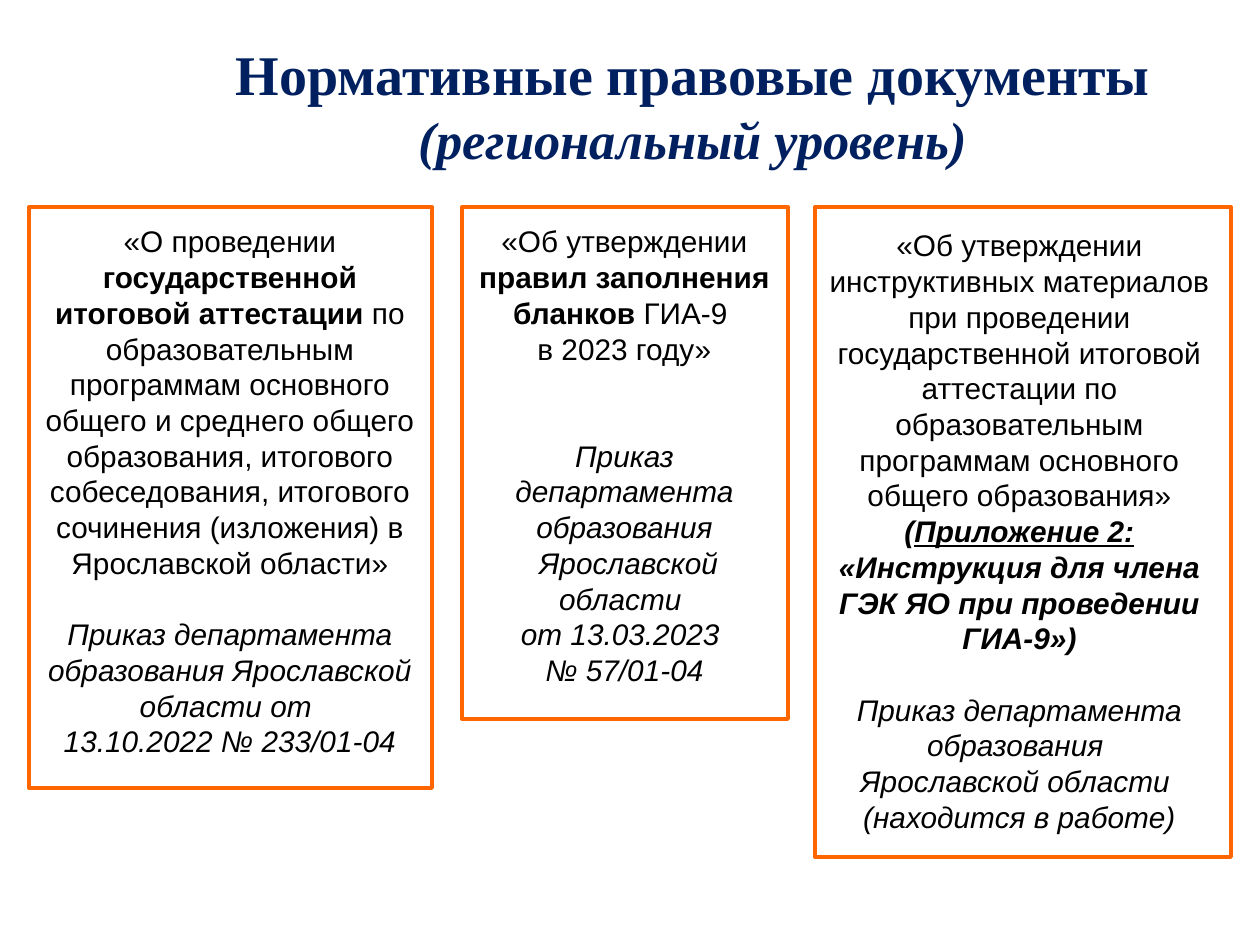
from pptx import Presentation
from pptx.dml.color import RGBColor
from pptx.enum.shapes import MSO_SHAPE
from pptx.enum.text import MSO_ANCHOR, PP_ALIGN
from pptx.util import Pt

PX = 914400 // 126
RECT = MSO_SHAPE.RECTANGLE
CENTER = PP_ALIGN.CENTER
MIDDLE = MSO_ANCHOR.MIDDLE

NAVY = RGBColor(0x00, 0x20, 0x60)
ORANGE = RGBColor(0xFF, 0x66, 0x00)
BLACK = RGBColor(0x00, 0x00, 0x00)

LINE_GAP = 20.4  # height of one text line, pt

# Frame box, text box offset and size inside it, then paragraphs:
# (lines of space before, [(text, styles)]); styles: b bold, i italic, u underline
DOCUMENTS = [
    ((29, 207, 403, 581), (-1, 10, 404, 553), [
        (0, [("«О проведении ", ""),
             ("государственной итоговой аттестации ", "b"),
             ("по образовательным программам основного общего и среднего "
              "общего образования, итогового собеседования, итогового "
              "сочинения (изложения) в Ярославской области»", "")]),
        (1, [("Приказ департамента образования Ярославской области от ", "i")]),
        (0, [("13.10.2022 № 233/01-04", "i")]),
    ]),
    ((462, 207, 326, 512), (0, 10, 325, 481), [
        (0, [("«Об утверждении ", ""),
             ("правил заполнения бланков", "b"),
             (" ГИА-9 ", "")]),
        (0, [("в 2023 году»", "")]),
        (2, [("Приказ департамента образования", "i")]),
        (0, [(" Ярославской области ", "i")]),
        (0, [("от 13.03.2023 ", "i")]),
        (0, [("№ 57/01-04", "i")]),
    ]),
    ((815, 207, 416, 650), (1, 14, 407, 625), [
        (0, [("«Об утверждении инструктивных материалов при проведении "
              "государственной итоговой аттестации по образовательным "
              "программам основного общего образования» ", ""),
             ("(", "bi"),
             ("Приложение 2: ", "biu"),
             ("«Инструкция для члена ГЭК ЯО при проведении ГИА-9»)", "bi")]),
        (1, [("Приказ департамента образования ", "i")]),
        (0, [("Ярославской области ", "i")]),
        (0, [("(находится в работе)", "i")]),
    ]),
]


def add_text_box(slide, box):
    tf = slide.shapes.add_textbox(*(v * PX for v in box)).text_frame
    tf.word_wrap = True
    return tf


def add_run(p, text, size, name, color, styles):
    r = p.add_run()
    r.text = text
    font = r.font
    font.size, font.name, font.color.rgb = Pt(size), name, color
    font.bold, font.italic = "b" in styles, "i" in styles
    if "u" in styles:
        font.underline = True


def add_title(slide, box):
    tf = add_text_box(slide, box)
    tf.vertical_anchor = MIDDLE
    p = tf.paragraphs[0]
    p.alignment = CENTER
    add_run(p, "Нормативные правовые документы ", 32, "Times New Roman", NAVY, "b")
    add_run(p, "(региональный уровень)", 30, "Times New Roman", NAVY, "bi")


def add_document(slide, box, inner, paragraphs):
    """Draw an orange frame with the document's name and order inside."""
    frame = slide.shapes.add_shape(RECT, *(v * PX for v in box))
    frame.shadow.inherit = False
    frame.fill.background()
    frame.line.color.rgb = ORANGE
    frame.line.width = Pt(2.25)

    x, y, w, h = inner
    tf = add_text_box(slide, (box[0] + x, box[1] + y, w, h))
    for i, (gap, runs) in enumerate(paragraphs):
        p = tf.add_paragraph() if i else tf.paragraphs[0]
        p.alignment = CENTER
        if gap:
            p.space_before = Pt(gap * LINE_GAP)
        for text, styles in runs:
            add_run(p, text, 17, "Arial", BLACK, styles)


def main():
    prs = Presentation()
    prs.slide_width, prs.slide_height = 1260 * PX, 945 * PX
    slide = prs.slides.add_slide(prs.slide_layouts[6])
    add_title(slide, (126, 26, 1134, 158))
    for box, inner, paragraphs in DOCUMENTS:
        add_document(slide, box, inner, paragraphs)
    prs.save("out.pptx")


if __name__ == "__main__":
    main()
